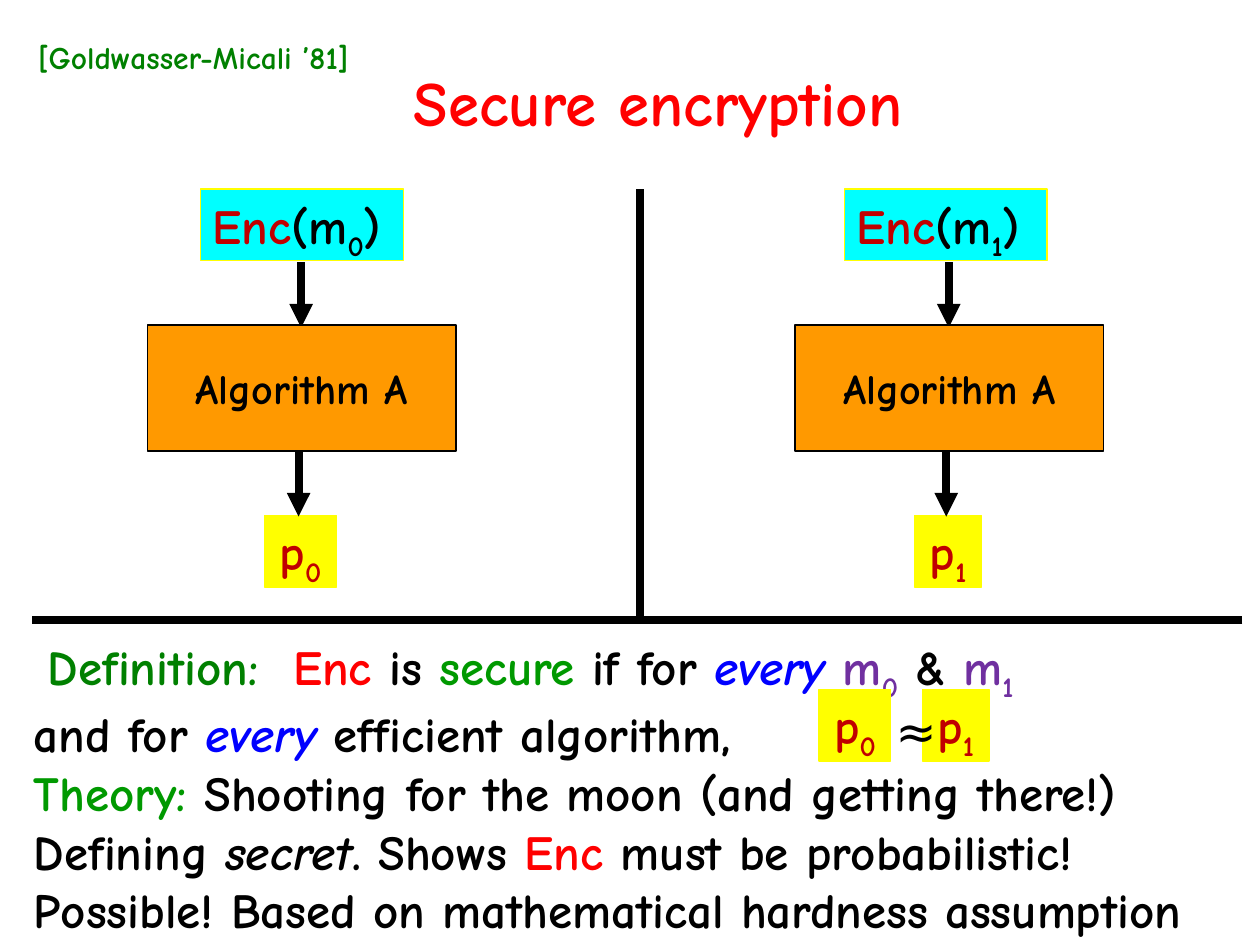
from dataclasses import dataclass

from pptx import Presentation
from pptx.dml.color import RGBColor
from pptx.enum.shapes import MSO_CONNECTOR, MSO_SHAPE
from pptx.enum.text import MSO_ANCHOR, MSO_AUTO_SIZE, PP_ALIGN
from pptx.oxml.ns import qn
from pptx.util import Inches, Pt
from lxml import etree

LEFT, CENTER = PP_ALIGN.LEFT, PP_ALIGN.CENTER
TOP, MIDDLE = MSO_ANCHOR.TOP, MSO_ANCHOR.MIDDLE
RECTANGLE, STRAIGHT = MSO_SHAPE.RECTANGLE, MSO_CONNECTOR.STRAIGHT
NO_AUTOFIT = MSO_AUTO_SIZE.NONE


@dataclass(frozen=True)
class Theme:
    font: str = "Comic Neue"
    # Colours
    black: str = "000000"
    red: str = "FF0000"
    dark_red: str = "C00000"
    green: str = "008000"
    bright_green: str = "009900"
    blue: str = "0000FF"
    purple: str = "7030A0"
    cyan: str = "00FFFF"
    yellow: str = "FFFF00"
    orange: str = "FF9900"
    # Type sizes and line widths
    title: int = 36
    body: int = 28
    label: int = 24
    citation: int = 18
    thick: float = 4.5
    thin: float = 0.75


THEME = Theme()


def styled(text, color=THEME.black, size=THEME.body, bold=True, italic=False, sub=False):
    """Describe one piece of text and its format."""
    return dict(text=text, color=color, size=size, bold=bold, italic=italic, sub=sub)


def with_index(letter, index, color):
    return [styled(letter, color), styled(index, color, sub=True)]


class SlideBuilder:
    def __init__(self, deck, theme):
        self.theme = theme
        self.page = deck.slides.add_slide(deck.slide_layouts[5])

    def fill_text(self, box, paragraphs, align=LEFT, anchor=TOP, wrap=True):
        frame = box.text_frame
        frame.auto_size = NO_AUTOFIT
        frame.word_wrap = wrap
        frame.vertical_anchor = anchor
        for number, pieces in enumerate(paragraphs):
            para = frame.add_paragraph() if number else frame.paragraphs[0]
            para.alignment = align
            for piece in pieces:
                span = para.add_run()
                span.text = piece["text"]
                span.font.name = self.theme.font
                span.font.size = Pt(piece["size"])
                span.font.bold = piece["bold"]
                span.font.italic = piece["italic"]
                span.font.color.rgb = RGBColor.from_string(piece["color"])
                if piece["sub"]:
                    span._r.get_or_add_rPr().set("baseline", "-25000")

    def title(self, left, top, width, height, pieces):
        box = self.page.shapes.title
        box.left, box.top = Inches(left), Inches(top)
        box.width, box.height = Inches(width), Inches(height)
        self.fill_text(box, [pieces], CENTER, MIDDLE)

    def text(self, left, top, width, height, paragraphs, **layout):
        box = self.page.shapes.add_textbox(
            Inches(left), Inches(top), Inches(width), Inches(height))
        self.fill_text(box, paragraphs, **layout)

    def block(self, left, top, width, height, pieces, fill, line, **layout):
        box = self.page.shapes.add_shape(
            RECTANGLE, Inches(left), Inches(top), Inches(width), Inches(height))
        box.shadow.inherit = False
        box.fill.solid()
        box.fill.fore_color.rgb = RGBColor.from_string(fill)
        box.line.color.rgb = RGBColor.from_string(line)
        box.line.width = Pt(self.theme.thin)
        self.fill_text(box, [pieces], wrap=False, **layout)

    def line(self, x1, y1, x2, y2, arrow=False):
        rule = self.page.shapes.add_connector(
            STRAIGHT, Inches(x1), Inches(y1), Inches(x2), Inches(y2))
        rule.line.color.rgb = RGBColor.from_string(self.theme.black)
        rule.line.width = Pt(self.theme.thick)
        if arrow:
            etree.SubElement(rule.line._get_or_add_ln(), qn("a:tailEnd"), type="triangle")
        etree.SubElement(rule._element.spPr, qn("a:effectLst"))

    def probability(self, left, top, width, index):
        self.block(left, top, width, 0.57, with_index("p", index, self.theme.dark_red),
                   self.theme.yellow, self.theme.yellow, align=CENTER)

    def experiment(self, left, index, input_left, output_left, output_width):
        """Encryption fed to the algorithm, which outputs a probability."""
        theme = self.theme
        self.probability(output_left, 4.09, output_width, index)
        message = [styled("Enc", theme.dark_red),
                   *with_index("(m", index, theme.black), styled(")")]
        self.block(input_left, 1.5, 1.61, 0.57, message, theme.cyan, theme.yellow)
        self.line(left + 1.22, 2.08, left + 1.22, 2.6, arrow=True)
        self.block(left, 2.58, 2.45, 1, [styled("Algorithm A", size=theme.label)],
                   theme.orange, theme.black, align=CENTER, anchor=MIDDLE)
        self.line(left + 1.2, 3.58, left + 1.2, 4.1, arrow=True)


def main():
    deck = Presentation()
    deck.slide_width, deck.slide_height = Inches(10), Inches(7.5)
    slide = SlideBuilder(deck, THEME)

    # Heading and citation
    slide.title(0.67, 0.19, 9.11, 1.23,
                [styled("Secure encryption", THEME.red, THEME.title)])
    slide.text(0.08, 0.25, 2.91, 0.4,
               [[styled("[Goldwasser-Micali ’81]", THEME.green, THEME.citation)]],
               align=CENTER, wrap=False)

    # Dividers
    slide.line(5.08, 1.5, 5.08, 4.92)
    slide.line(9.86, 4.92, 0.25, 4.92)

    # The two experiments
    slide.experiment(1.17, "0", input_left=1.59, output_left=2.1, output_width=0.57)
    slide.experiment(6.31, "1", input_left=6.7, output_left=7.26, output_width=0.53)

    # Definition
    every = styled("every ", THEME.blue, italic=True)
    slide.text(0.17, 5, 9.23, 1.04, [
        [styled(" ", size=THEME.label, bold=False),
         styled("Definition:  ", THEME.green), styled("Enc ", THEME.red),
         styled("is "), styled("secure", THEME.bright_green), styled(" if for "), every,
         *with_index("m", "0", THEME.purple), styled(" & "),
         *with_index("m", "1", THEME.purple)],
        [styled("and for "), every, styled("efficient algorithm,")],
    ])

    # Closeness of the two probabilities
    slide.probability(6.5, 5.47, 0.57, "0")
    slide.probability(7.32, 5.47, 0.53, "1")
    slide.text(7.01, 5.51, 0.42, 0.57, [[styled("≈", bold=False)]], wrap=False)

    # Theory
    slide.text(0.17, 6, 9.92, 1.51, [
        [styled("Theory: ", THEME.bright_green),
         styled("Shooting for the moon (and getting there!) Defining "),
         styled("secret", italic=True), styled(". Shows "),
         styled("Enc ", THEME.red), styled("must be probabilistic!")],
        [styled("Possible! Based on mathematical hardness assumption")],
    ])

    deck.save("out.pptx")


if __name__ == "__main__":
    main()
